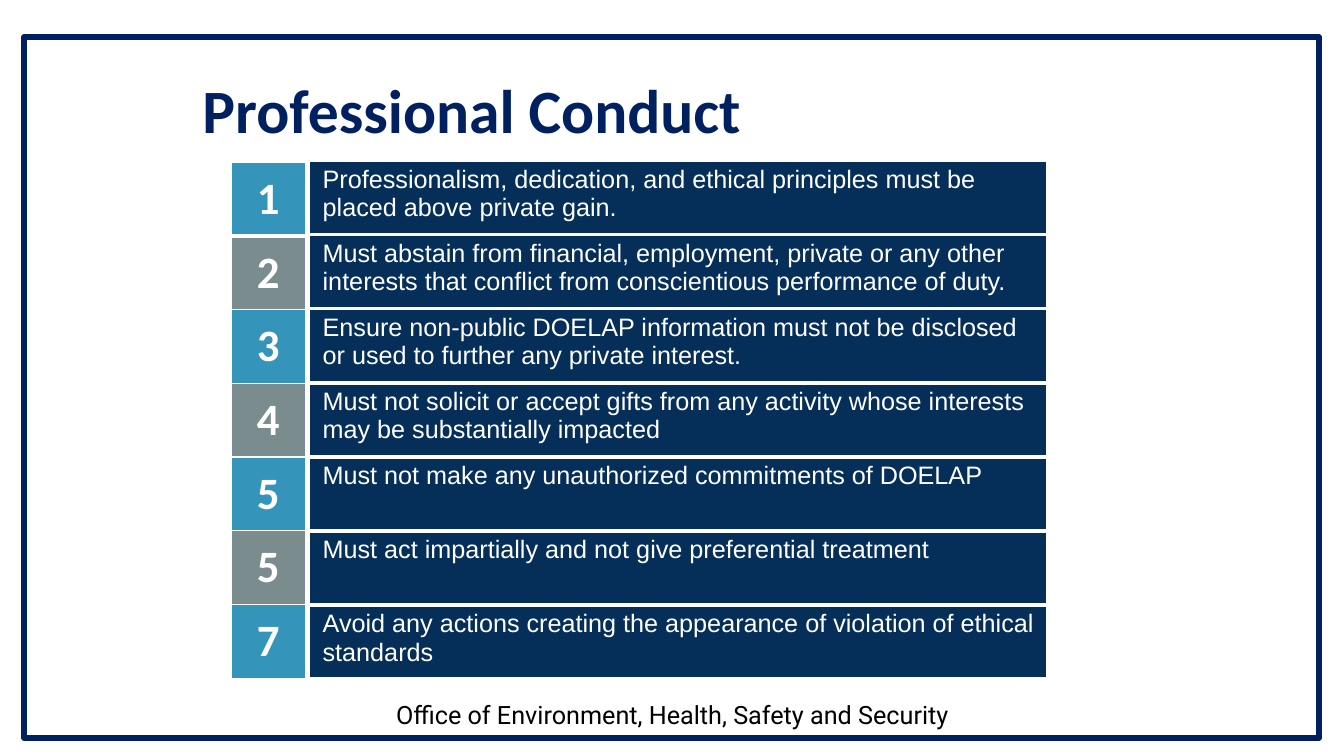
from dataclasses import dataclass

from lxml import etree
from pptx import Presentation
from pptx.dml.color import RGBColor
from pptx.enum.shapes import MSO_SHAPE
from pptx.enum.text import MSO_ANCHOR, PP_ALIGN
from pptx.oxml.ns import qn
from pptx.util import Inches, Pt

RECT = MSO_SHAPE.RECTANGLE
TOP, MIDDLE = MSO_ANCHOR.TOP, MSO_ANCHOR.MIDDLE
LEFT, CENTER = PP_ALIGN.LEFT, PP_ALIGN.CENTER


@dataclass(frozen=True)
class Theme:
    """Colours, fonts and type sizes of the slide."""
    navy: str = "002060"
    panel: str = "052F59"
    teal: str = "3494BA"
    gray: str = "7A8C8E"
    white: str = "FFFFFF"
    black: str = "000000"
    head: str = "Calibri"
    body: str = "Arial"
    foot: str = "Roboto"
    title: int = 44
    digit: int = 32
    text: int = 18


THEME = Theme()
RULES = [
    ("1", "Professionalism, dedication, and ethical principles must be placed above private gain."),
    ("2", "Must abstain from financial, employment, private or any other interests "
          "that conflict from conscientious performance of duty."),
    ("3", "Ensure non-public DOELAP information must not be disclosed "
          "or used to further any private interest."),
    ("4", "Must not solicit or accept gifts from any activity whose interests "
          "may be substantially impacted"),
    ("5", "Must not make any unauthorized commitments of DOELAP"),
    ("5", "Must act impartially and not give preferential treatment"),
    ("7", "Avoid any actions creating the appearance of violation of ethical standards"),
]


def place(box):
    """Turn left, top, width and height into lengths."""
    return [Inches(size) for size in box]


def write(para, text, font, size, color, bold=False, align=LEFT):
    """Add one styled run to a paragraph."""
    para.alignment = align
    run = para.add_run()
    run.text = text
    run.font.name, run.font.size, run.font.bold = font, Pt(size), bold
    run.font.color.rgb = RGBColor.from_string(color)


def add_box(slide, box, line, width, fill=None):
    """Draw an outlined rectangle."""
    shape = slide.shapes.add_shape(RECT, *place(box))
    shape.shadow.inherit = False
    if fill:
        shape.fill.solid()
        shape.fill.fore_color.rgb = RGBColor.from_string(fill)
    else:
        shape.fill.background()
    shape.line.color.rgb = RGBColor.from_string(line)
    shape.line.width = Pt(width)


def add_text(slide, box, text, font, size, color, bold=False, align=LEFT, anchor=TOP, space=1.0):
    """Add a wrapped text box with one line."""
    frame = slide.shapes.add_textbox(*place(box)).text_frame
    frame.word_wrap = True
    frame.vertical_anchor = anchor
    para = frame.paragraphs[0]
    para.line_spacing = space
    write(para, text, font, size, color, bold, align)


def add_edge(cell, side, width):
    """Draw one white border of a cell."""
    props = cell._tc.get_or_add_tcPr()
    edge = etree.SubElement(props, qn(f"a:ln{side}"), w=str(Pt(width)))
    fill = etree.SubElement(edge, qn("a:solidFill"))
    etree.SubElement(fill, qn("a:srgbClr"), val=THEME.white)


def add_list(slide, box, count, width):
    """Add a plain one-column table and return its cells."""
    table = slide.shapes.add_table(count, 1, *place(box)).table
    table.first_row = table.horz_banding = False
    cells = [table.cell(row, 0) for row in range(count)]
    for row, cell in enumerate(cells):
        for side in "LRTB":
            near = (row == 0 and side == "B") or (row == 1 and side == "T")
            add_edge(cell, side, 3 if near else width)
    return cells


def add_rules(slide, box):
    """Add the table of rule texts."""
    for cell, (_, text) in zip(add_list(slide, box, len(RULES), 3), RULES):
        cell.fill.background()
        para = cell.text_frame.paragraphs[0]
        props = para._p.get_or_add_pPr()
        props.set("marL", str(Inches(0.81)))
        props.set("indent", "0")
        write(para, text, THEME.body, THEME.text, THEME.white)


def add_digits(slide, box):
    """Add the table of numbers in alternating colours."""
    cells = add_list(slide, box, len(RULES), 1)
    for row, (cell, (digit, _)) in enumerate(zip(cells, RULES)):
        cell.fill.solid()
        color = THEME.gray if row % 2 else THEME.teal
        cell.fill.fore_color.rgb = RGBColor.from_string(color)
        cell.vertical_anchor = MIDDLE
        write(cell.text_frame.paragraphs[0], digit, THEME.head, THEME.digit,
              THEME.white, True, CENTER)


def main():
    """Build and save the slide."""
    deck = Presentation()
    deck.slide_width, deck.slide_height = Inches(13.33), Inches(7.5)
    slide = deck.slides.add_slide(deck.slide_layouts[6])
    add_box(slide, (0.24, 0.37, 12.84, 6.95), THEME.navy, 4.5)
    add_text(slide, (3.63, 6.89, 6.08, 0.4), "Office of Environment, Health, Safety and Security",
             THEME.foot, THEME.text, THEME.black, align=CENTER)
    add_text(slide, (1.91, 0.4, 10.5, 1.45), "Professional Conduct", THEME.head, THEME.title,
             THEME.navy, True, anchor=MIDDLE, space=0.9)
    add_box(slide, (3.04, 1.59, 7.36, 5.15), THEME.white, 3, THEME.panel)
    add_box(slide, (2.29, 1.59, 0.76, 5.15), THEME.white, 3, THEME.teal)
    add_rules(slide, (2.29, 1.59, 8.11, 5.15))
    add_digits(slide, (2.29, 1.61, 0.74, 5.12))
    deck.save("out.pptx")


if __name__ == "__main__":
    main()
